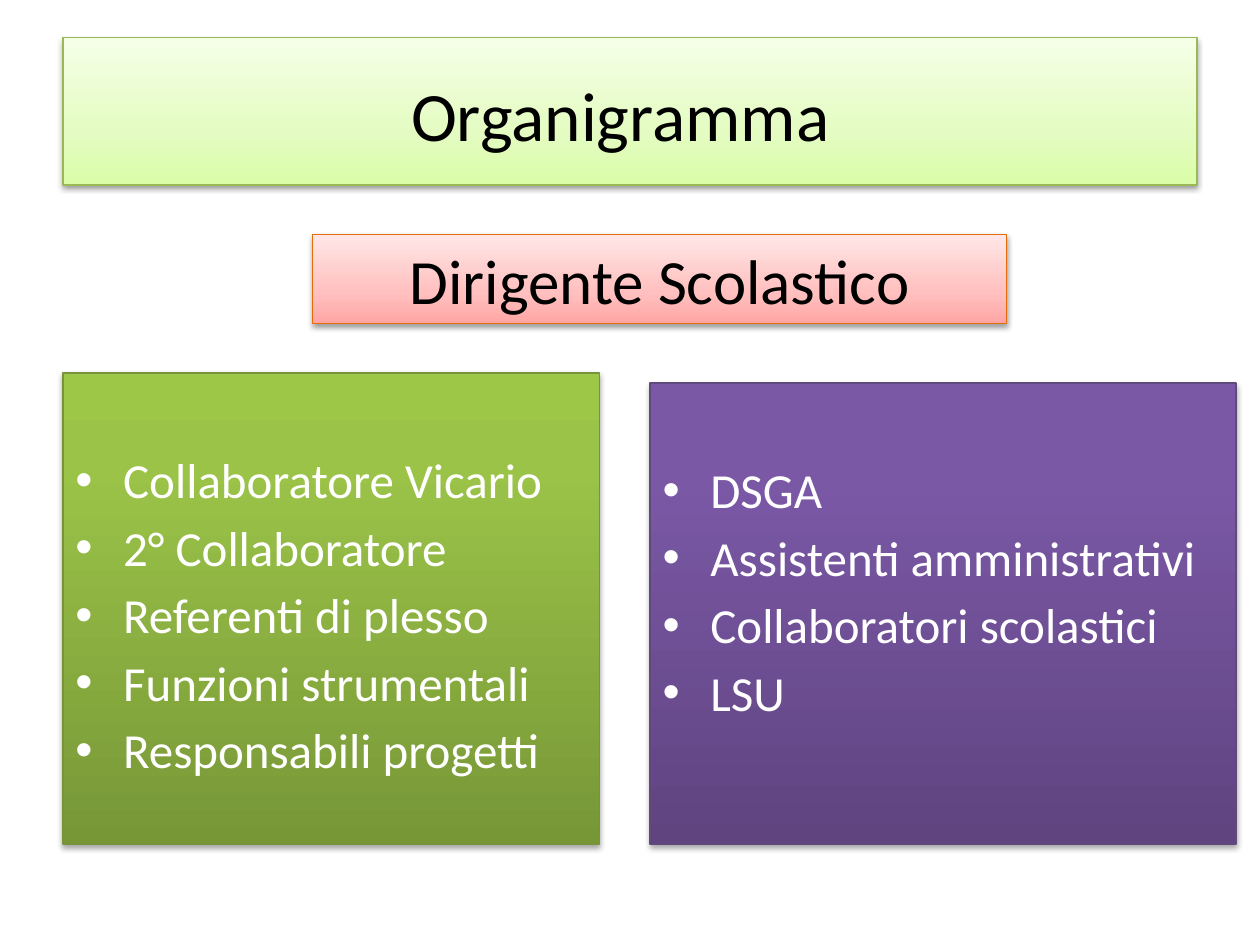
import copy
from dataclasses import dataclass

import lxml.etree
import pptx
import pptx.dml.color
import pptx.enum.shapes
import pptx.enum.text
import pptx.oxml
import pptx.oxml.ns
import pptx.util

Inches = pptx.util.Inches
Pt = pptx.util.Pt
rgb = pptx.dml.color.RGBColor.from_string
qn = pptx.oxml.ns.qn
Anchor = pptx.enum.text.MSO_ANCHOR
Align = pptx.enum.text.PP_ALIGN


@dataclass(frozen=True)
class Palette:
    """Gradient stops run from the bottom of a box to its top."""
    stops: tuple[tuple[float, str], ...]
    line: str
    text: str
    shadow_opacity: int
    shadow_distance: float


@dataclass(frozen=True)
class Theme:
    font: str = "Calibri"
    title_size: float = 39.6
    heading_size: float = 36
    list_size: float = 28
    list_gap: float = 5
    list_indent: float = 0.38
    line_width: float = 0.75
    shadow_blur: float = 3.1
    lime: Palette = Palette(
        ((0, "DAFDA7"), (0.35, "E4FCC2"), (1, "F5FFE7")), "98B955", "000000", 38, 1.6)
    rose: Palette = Palette(
        ((0, "FFA6A5"), (0.35, "FFC0BF"), (1, "FFE7E7")), "E46C0A", "000000", 38, 1.6)
    green: Palette = Palette(
        ((0, "779737"), (0.8, "9BC348"), (1, "9DC746")), "77933C", "FFFFFF", 35, 1.8)
    purple: Palette = Palette(
        ((0, "5F4480"), (0.8, "7B58A6"), (1, "7C57A8")), "604A7B", "FFFFFF", 35, 1.8)


THEME = Theme()


@dataclass(frozen=True)
class Panel:
    left: float
    top: float
    width: float
    height: float
    palette: Palette
    size: float
    lines: tuple[str, ...]
    bulleted: bool = False
    inset_top: float = 0.05
    inset_right: float = 0.1


PANELS = (
    Panel(0.5, 0.3, 9, 1.17, THEME.lime, THEME.title_size, ("Organigramma",),
          inset_top=0.09, inset_right=0.25),
    Panel(0.5, 2.96, 4.26, 3.74, THEME.green, THEME.list_size,
          ("Collaboratore Vicario", "2° Collaboratore", "Referenti di plesso",
           "Funzioni strumentali", "Responsabili progetti"),
          bulleted=True, inset_top=0.61),
    Panel(5.16, 3.04, 4.65, 3.66, THEME.purple, THEME.list_size,
          ("DSGA", "Assistenti amministrativi", "Collaboratori scolastici", "LSU"),
          bulleted=True, inset_top=0.61),
    Panel(2.48, 1.86, 5.51, 0.71, THEME.rose, THEME.heading_size,
          ("Dirigente Scolastico",)),
)


def apply_format(target: object, values: dict[str, object]) -> None:
    for name, value in values.items():
        setattr(target, name, value)


def fill_gradient(box, palette: Palette) -> None:
    box.fill.gradient()
    box.fill.gradient_angle = 90
    stop_list = next(box._element.spPr.iter(qn("a:gsLst")))
    stop_list.append(copy.deepcopy(stop_list[-1]))
    for stop, (position, color) in zip(box.fill.gradient_stops, palette.stops):
        stop.color.rgb = rgb(color)
        stop.position = position


def add_shadow(box, palette: Palette) -> None:
    box.shadow.inherit = False
    effects = box._element.spPr.find(qn("a:effectLst"))
    shadow = lxml.etree.SubElement(
        effects, qn("a:outerShdw"), blurRad=str(Pt(THEME.shadow_blur)),
        dist=str(Pt(palette.shadow_distance)), dir="5400000", rotWithShape="0")
    color = lxml.etree.SubElement(shadow, qn("a:srgbClr"), val="000000")
    lxml.etree.SubElement(color, qn("a:alpha"), val=str(palette.shadow_opacity * 1000))


def add_bullet(para) -> None:
    indent = Inches(THEME.list_indent)
    properties = para._p.get_or_add_pPr()
    properties.set("marL", str(indent))
    properties.set("indent", str(-indent))
    lxml.etree.SubElement(properties, qn("a:buFont"), typeface="Arial")
    lxml.etree.SubElement(properties, qn("a:buChar"), char="•")


def write_lines(box, panel: Panel) -> None:
    frame = box.text_frame
    apply_format(frame, {
        "word_wrap": True,
        "vertical_anchor": Anchor.TOP if panel.bulleted else Anchor.MIDDLE,
        "margin_left": Inches(0.1),
        "margin_right": Inches(panel.inset_right),
        "margin_top": Inches(panel.inset_top),
        "margin_bottom": Inches(0.05),
    })
    for index, line in enumerate(panel.lines):
        para = frame.add_paragraph() if index else frame.paragraphs[0]
        apply_format(para, {
            "alignment": Align.LEFT if panel.bulleted else Align.CENTER,
            "space_before": Pt(THEME.list_gap if index else 0),
        })
        if panel.bulleted:
            add_bullet(para)
        span = para.add_run()
        span.text = line
        apply_format(span.font, {"name": THEME.font, "size": Pt(panel.size)})
        span.font.color.rgb = rgb(panel.palette.text)


def add_panel(page, panel: Panel) -> None:
    box = page.shapes.add_shape(
        pptx.enum.shapes.MSO_SHAPE.RECTANGLE, Inches(panel.left), Inches(panel.top),
        Inches(panel.width), Inches(panel.height))
    fill_gradient(box, panel.palette)
    box.line.color.rgb = rgb(panel.palette.line)
    box.line.width = Pt(THEME.line_width)
    add_shadow(box, panel.palette)
    write_lines(box, panel)


def main() -> None:
    deck = pptx.Presentation()
    apply_format(deck, {"slide_width": Inches(10), "slide_height": Inches(7.5)})
    page = deck.slides.add_slide(deck.slide_layouts[6])
    for panel in PANELS:
        add_panel(page, panel)
    deck.save("out.pptx")


if __name__ == "__main__":
    main()
